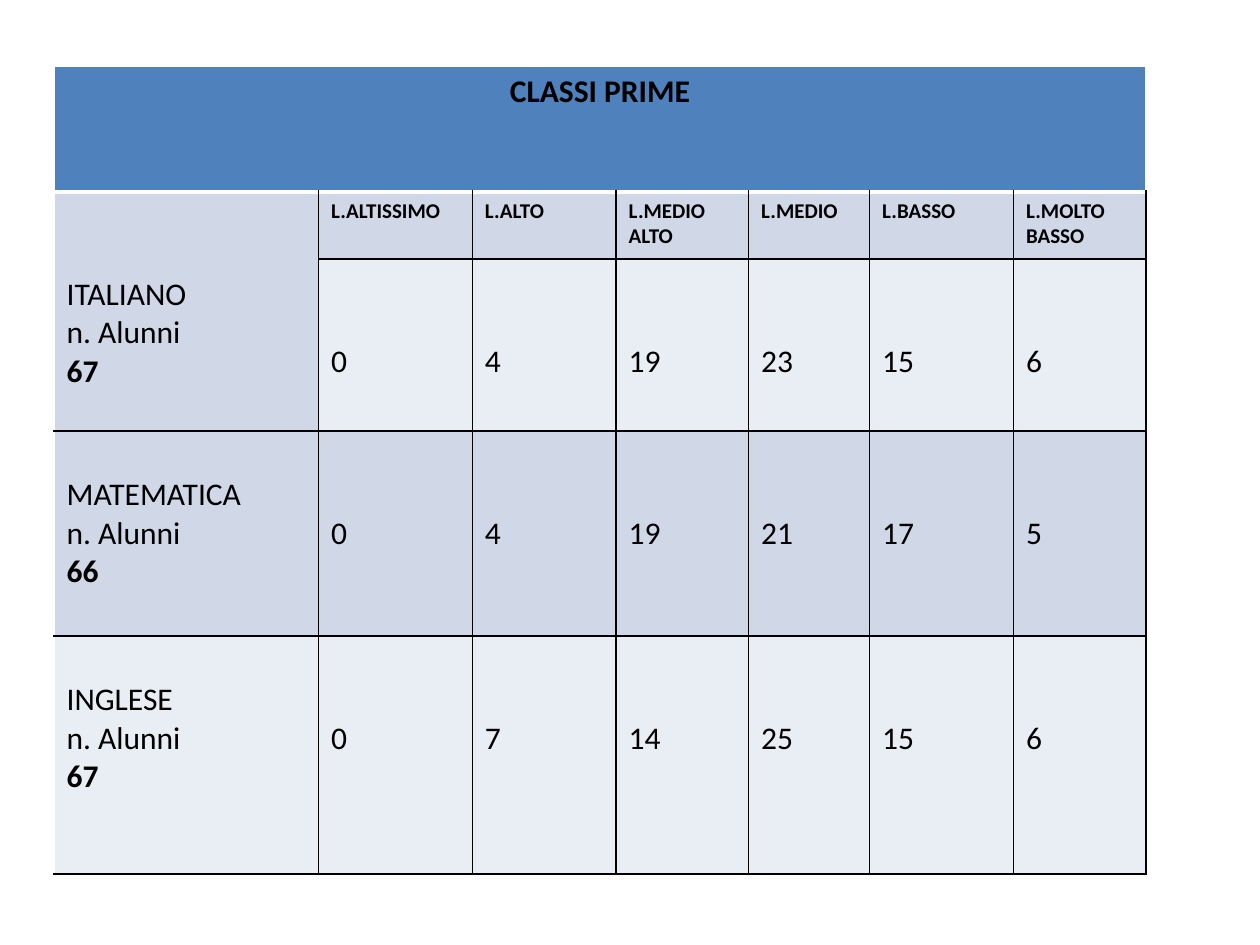
"""Build the slide with the level table for the first-year classes."""
from pptx import Presentation
from pptx import util as u
from pptx.dml.color import RGBColor
from pptx.enum import text
from pptx.oxml import parse_xml
from pptx.oxml.ns import nsdecls

BLACK = RGBColor(0, 0, 0)
WHITE = RGBColor(255, 255, 255)
BLUE = RGBColor(0x4F, 0x81, 0xBD)
DARK = RGBColor(0xD0, 0xD8, 0xE8)
LIGHT = RGBColor(0xE9, 0xED, 0xF4)

TITLE = "CLASSI PRIME"
LEVELS = ["L.ALTISSIMO", "L.ALTO", "L.MEDIO ALTO", "L.MEDIO", "L.BASSO", "L.MOLTO\nBASSO"]
CLASSES = [
    ("ITALIANO", 67, [0, 4, 19, 23, 15, 6]),
    ("MATEMATICA", 66, [0, 4, 19, 21, 17, 5]),
    ("INGLESE", 67, [0, 7, 14, 25, 15, 6]),
]
WIDTHS = [5.33, 3.1, 2.9, 2.67, 2.44, 2.9, 2.67]
HEIGHTS = [2.54, 1.35, 3.47, 4.13, 4.8]
FILLS = [BLUE, DARK, LIGHT, DARK, LIGHT]
LEFT, TOP = 1.09, 1.33
PAD, LINE = 0.13, 0.775

HEAD = {"size": u.Pt(18), "bold": True}
LEVEL = {"size": u.Pt(12), "bold": True}
BODY = {"size": u.Pt(18), "bold": False}


def edge(cell, side, color, width):
    props = cell._tc.get_or_add_tcPr()
    props.append(parse_xml(
        f'<a:ln{side} {nsdecls("a")} w="{u.Pt(width)}"><a:solidFill>'
        f'<a:srgbClr val="{color}"/></a:solidFill></a:ln{side}>'))


def frame(cell, row, col):
    edge(cell, "L", BLACK if col else WHITE, 1)
    edge(cell, "R", BLACK if row else WHITE, 1)
    edge(cell, "T", BLACK if row > 1 else WHITE, 3 if row == 1 else 1)
    edge(cell, "B", BLACK if row else WHITE, 1 if row else 3)


def write(cell, lines, form, skip=0, align=text.PP_ALIGN.LEFT):
    cell.margin_top = u.Cm(PAD + skip * LINE)
    cell.text = "\n".join(lines)
    for para in cell.text_frame.paragraphs:
        para.alignment = align
        font = para.runs[0].font
        font.color.rgb = BLACK
        for key, val in {"name": "Calibri", **form}.items():
            setattr(font, key, val)


def fill_in(table):
    write(table.cell(0, 0), [TITLE], HEAD, align=text.PP_ALIGN.CENTER)
    for col, level in enumerate(LEVELS, 1):
        write(table.cell(1, col), [level], LEVEL)
    for row, (name, count, marks) in enumerate(CLASSES, 2):
        first = row == 2
        label = table.cell(1 if first else row, 0)
        write(label, [name, "n. Alunni", str(count)], BODY, 2 if first else 1)
        label.text_frame.paragraphs[-1].runs[0].font.bold = True
        for col, mark in enumerate(marks, 1):
            write(table.cell(row, col), [str(mark)], BODY, 2)


def main():
    deck = Presentation()
    deck.slide_width, deck.slide_height = u.Cm(25.4), u.Cm(19.05)
    slide = deck.slides.add_slide(deck.slide_layouts[6])
    table = slide.shapes.add_table(
        len(HEIGHTS), len(WIDTHS), u.Cm(LEFT), u.Cm(TOP),
        u.Cm(sum(WIDTHS)), u.Cm(sum(HEIGHTS))).table
    table.first_row = table.horz_banding = False
    for part, width in zip(table.columns, WIDTHS):
        part.width = u.Cm(width)
    for part, height in zip(table.rows, HEIGHTS):
        part.height = u.Cm(height)
    table.cell(0, 0).merge(table.cell(0, len(WIDTHS) - 1))
    table.cell(1, 0).merge(table.cell(2, 0))
    for row, shade in enumerate(FILLS):
        for col in range(len(WIDTHS)):
            cell = table.cell(row, col)
            if not cell.is_spanned:
                frame(cell, row, col)
                cell.fill.solid()
                cell.fill.fore_color.rgb = shade
    fill_in(table)
    deck.save("out.pptx")


if __name__ == "__main__":
    main()
